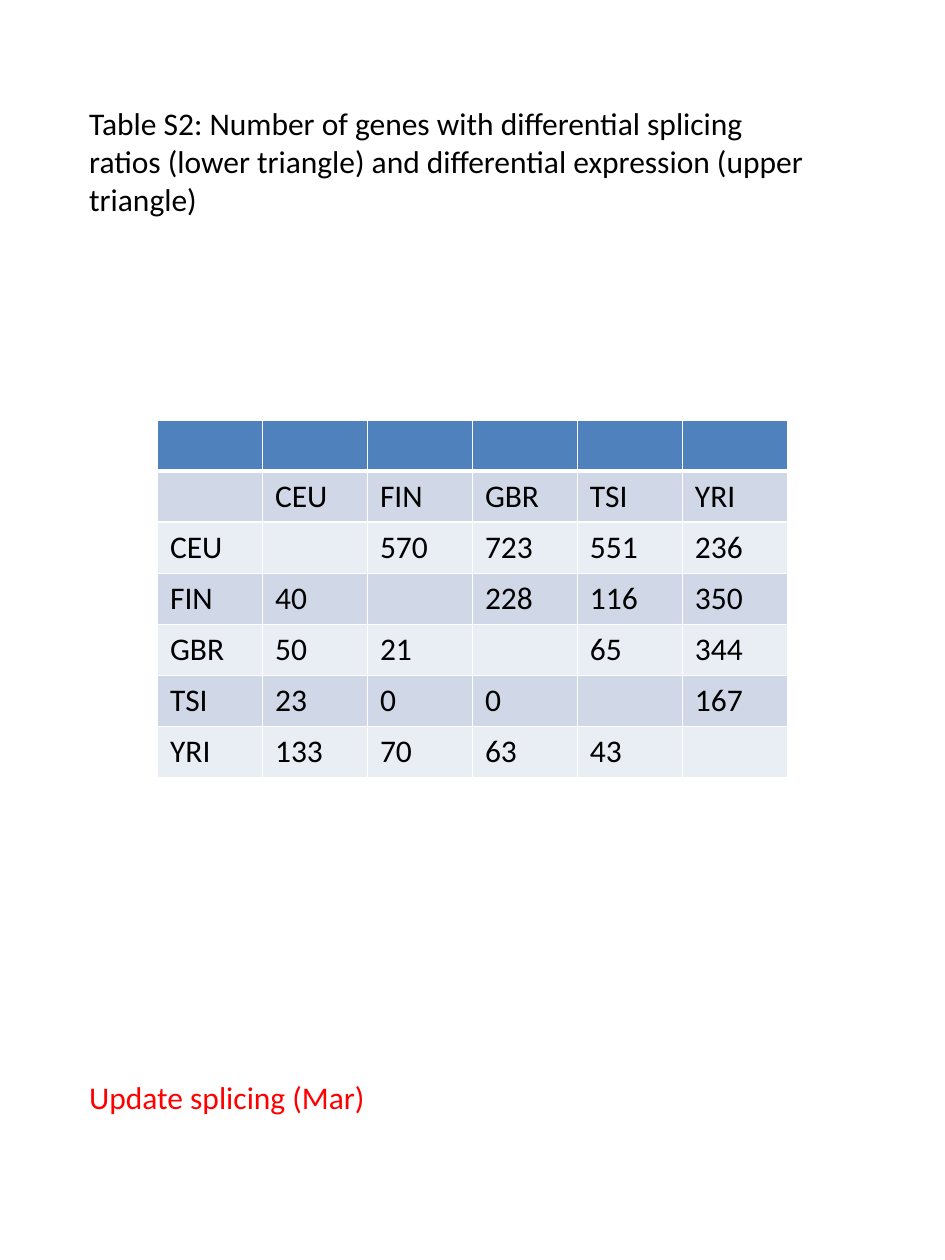
"""Build the Table S2 slide: gene counts between pairs of populations."""
from dataclasses import dataclass

from lxml import etree
from pptx import Presentation
from pptx.dml.color import RGBColor
from pptx.enum import text
from pptx.oxml import ns
from pptx.util import Inches, Pt


@dataclass(frozen=True)
class Theme:
    font: str = "Calibri"
    size: int = 18
    ink: str = "000000"
    alert: str = "FF0000"
    header: str = "4F81BD"
    bands: tuple = ("E9EDF4", "D0D8E8")
    rule: str = "FFFFFF"
    thin: int = 1
    thick: int = 3


theme = Theme()


def write(paragraph, words, color):
    run = paragraph.add_run()
    run.text = words
    run.font.name = theme.font
    run.font.size = Pt(theme.size)
    run.font.color.rgb = RGBColor.from_string(color)


def add_border(cell, side, points):
    props = cell._tc.get_or_add_tcPr()
    line = etree.SubElement(props, ns.qn(f"a:ln{side}"), w=str(Pt(points)))
    fill = etree.SubElement(line, ns.qn("a:solidFill"))
    etree.SubElement(fill, ns.qn("a:srgbClr"), val=theme.rule)


deck = Presentation()
deck.slide_width, deck.slide_height = Inches(7.5), Inches(10)
width, height = deck.slide_width, deck.slide_height
slide = deck.slides.add_slide(deck.slide_layouts[6])

margin = 0.61 / 7.5
statements = [
    ("Table S2: Number of genes with differential splicing ratios (lower triangle) "
     "and differential expression (upper triangle)", 0.078, 0.8, 0.131, True, theme.ink),
    ("Update splicing (Mar)", 0.851, 0.32, 0.04, False, theme.alert),
]
for words, top, share_wide, share_high, wraps, color in statements:
    statement = slide.shapes.add_textbox(
        int(margin * width), int(top * height), int(share_wide * width), int(share_high * height))
    statement.text_frame.word_wrap = wraps
    write(statement.text_frame.paragraphs[0], words, color)

populations = ["CEU", "FIN", "GBR", "TSI", "YRI"]
counts = [
    ["", "570", "723", "551", "236"],
    ["40", "", "228", "116", "350"],
    ["50", "21", "", "65", "344"],
    ["23", "0", "0", "", "167"],
    ["133", "70", "63", "43", ""],
]
rows = [[""] * 6, ["", *populations]]
rows += [[population, *values] for population, values in zip(populations, counts)]

gene_counts = slide.shapes.add_table(
    len(rows), len(rows[0]), width // 6, height // 3, width * 2 // 3, int(0.284 * height)).table
for r, values in enumerate(rows):
    for c, value in enumerate(values):
        cell = gene_counts.cell(r, c)
        cell.vertical_anchor = text.MSO_ANCHOR.MIDDLE
        for side in "LRTB":
            under_header = (r, side) in [(0, "B"), (1, "T")]
            add_border(cell, side, theme.thick if under_header else theme.thin)
        cell.fill.solid()
        cell.fill.fore_color.rgb = RGBColor.from_string(theme.bands[r % 2] if r else theme.header)
        if value:
            write(cell.text_frame.paragraphs[0], value, theme.ink)

deck.save("out.pptx")
